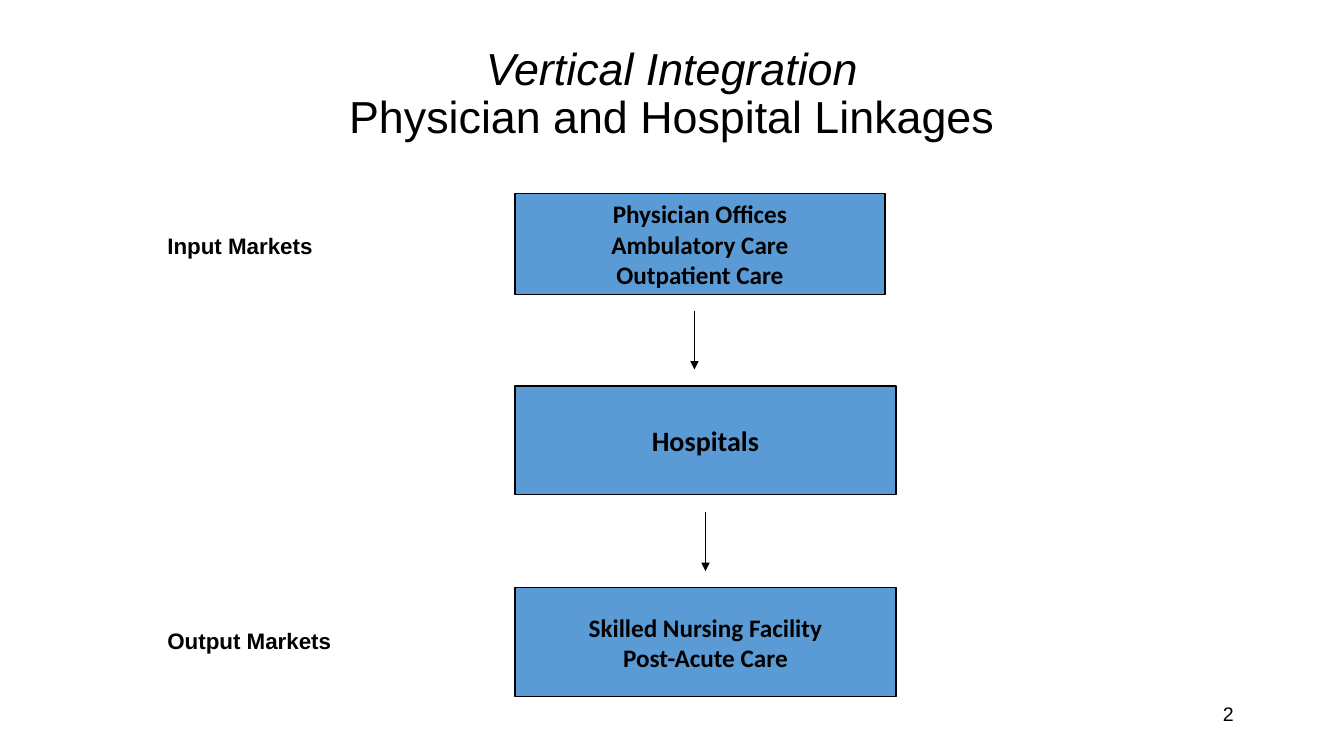
from pptx import Presentation
from pptx import util as u
from pptx.dml import color
from pptx.enum import shapes, text
from pptx.oxml import parse_xml
from pptx.oxml.ns import nsdecls

BLACK = "000000"
BLUE = "5B9BD5"
LEFT = 12.98  # left edge of the flow boxes
GAP = 0.42    # space between a box and an arrow

# top, width, height, size, lines
STAGES = [
    (4.88, 9.32, 2.54, 18,
     "Physician Offices\nAmbulatory Care\nOutpatient Care"),
    (9.73, 9.6, 2.74, 20, "Hospitals"),
    (14.81, 9.6, 2.74, 18, "Skilled Nursing Facility\nPost-Acute Care"),
]
ARROWS = [17.5, 17.78]  # x of each arrow
LABELS = [(5.72, "Input Markets"), (15.67, "Output Markets")]


def rgb(code):
    return color.RGBColor.from_string(code)


def write(shape, words, size, font, align, bold=False, middle=True):
    frame = shape.text_frame
    frame.text = words
    frame.word_wrap = True
    frame.vertical_anchor = (text.MSO_ANCHOR.MIDDLE if middle
                             else text.MSO_ANCHOR.TOP)
    for para in frame.paragraphs:
        para.alignment = align
        for run in para.runs:
            run.font.size = u.Pt(size)
            run.font.name = font
            run.font.bold = bold
            run.font.color.rgb = rgb(BLACK)
    return frame


def add_text(slide, box, words, size, align, **style):
    area = slide.shapes.add_textbox(*map(u.Cm, box))
    return write(area, words, size, "Arial", align, **style)


def add_title(slide, box):
    frame = add_text(slide, box,
                     "Vertical Integration\vPhysician and Hospital Linkages",
                     32, text.PP_ALIGN.CENTER)
    para = frame.paragraphs[0]
    para.line_spacing = 0.9
    para.runs[0].font.italic = True


def add_stage(slide, box, size, words):
    rect = slide.shapes.add_shape(shapes.MSO_SHAPE.RECTANGLE,
                                  *map(u.Cm, box))
    rect.shadow.inherit = False
    rect.fill.solid()
    rect.fill.fore_color.rgb = rgb(BLUE)
    rect.line.color.rgb = rgb(BLACK)
    rect.line.width = u.Pt(1)
    write(rect, words, size, "Calibri", text.PP_ALIGN.CENTER, bold=True)


def add_arrow(slide, x, top, end):
    line = slide.shapes.add_connector(shapes.MSO_CONNECTOR.STRAIGHT,
                                      *map(u.Cm, (x, top, x, end)))
    line.line.color.rgb = rgb(BLACK)
    line.line.width = u.Pt(1)
    # Arrowhead, and no shadow
    line.line._get_or_add_ln().append(
        parse_xml(f'<a:tailEnd {nsdecls("a")} type="triangle"/>'))
    line._element.spPr.append(parse_xml(f'<a:effectLst {nsdecls("a")}/>'))


def add_flow(slide, left):
    for top, width, height, size, words in STAGES:
        add_stage(slide, (left, top, width, height), size, words)
    # Arrows fill the space between neighbouring boxes
    for x, above, below in zip(ARROWS, STAGES, STAGES[1:]):
        add_arrow(slide, x, above[0] + above[2] + GAP, below[0] - GAP)


def add_labels(slide, left):
    for top, words in LABELS:
        add_text(slide, (left, top, 6.2, 0.94), words, 16,
                 text.PP_ALIGN.LEFT, bold=True, middle=False)


def main():
    deck = Presentation()
    deck.slide_width = u.Cm(33.87)
    deck.slide_height = u.Cm(19.05)
    slide = deck.slides.add_slide(deck.slide_layouts[6])

    add_title(slide, (2.33, 0.56, 29.21, 3.68))
    add_flow(slide, LEFT)
    add_labels(slide, 3.97)
    # Page number
    add_text(slide, (24.28, 17.35, 7.06, 1.27), "2", 14,
             text.PP_ALIGN.RIGHT)
    deck.save("out.pptx")


if __name__ == "__main__":
    main()
